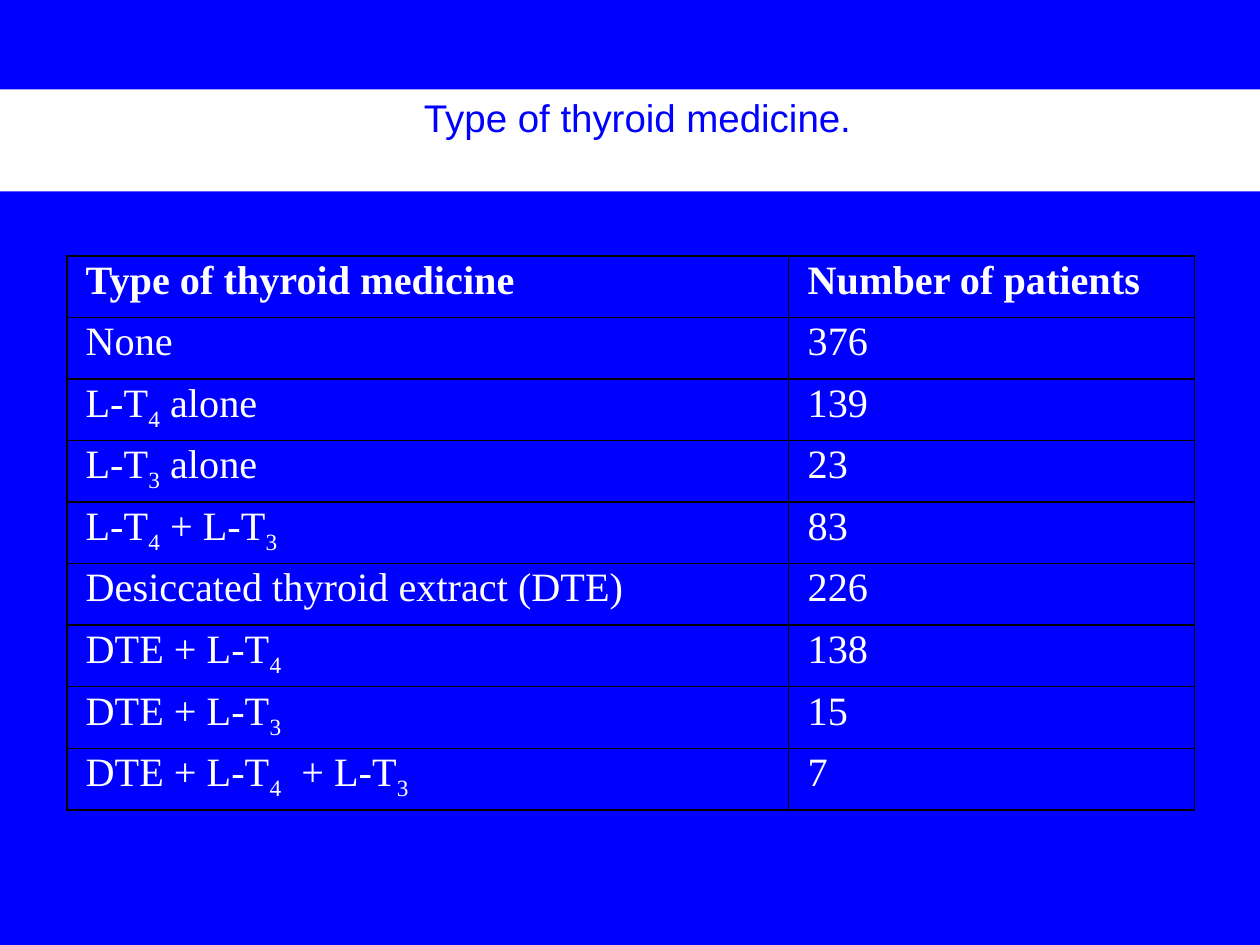
from dataclasses import dataclass

from lxml.etree import SubElement
from pptx import Presentation
from pptx.dml.color import RGBColor
from pptx.enum.shapes import MSO_SHAPE
from pptx.enum.text import MSO_ANCHOR, PP_ALIGN
from pptx.oxml.ns import qn
from pptx.util import Inches, Pt


@dataclass(frozen=True)
class Theme:
    blue: str = "0000FF"
    white: str = "FFFFFF"
    black: str = "000000"
    title_font: str = "Arial"
    table_font: str = "Times New Roman"
    title_size: int = 22
    table_size: int = 23
    border_width: int = 1


class SlideBuilder:
    """Draws themed elements on one slide, measured on a 100 by 75 grid."""

    def __init__(self, presentation, theme):
        self.theme = theme
        self.column = presentation.slide_width / 100
        self.row = presentation.slide_height / 75
        self.slide = presentation.slides.add_slide(presentation.slide_layouts[6])
        self.fill(self.slide.background, theme.blue)

    def place(self, left, top, width, height):
        return (round(left * self.column), round(top * self.row),
                round(width * self.column), round(height * self.row))

    def fill(self, target, color):
        target.fill.solid()
        target.fill.fore_color.rgb = RGBColor.from_string(color)

    def style(self, run, font, size, color, bold=False):
        run.font.name = font
        run.font.size = Pt(size)
        run.font.bold = bold
        run.font.color.rgb = RGBColor.from_string(color)

    def band(self, *box):
        shape = self.slide.shapes.add_shape(MSO_SHAPE.RECTANGLE, *self.place(*box))
        shape.shadow.inherit = False
        self.fill(shape, self.theme.white)
        shape.line.fill.background()

    def title(self, text, *box):
        text_frame = self.slide.shapes.add_textbox(*self.place(*box)).text_frame
        text_frame.word_wrap = True
        text_frame.vertical_anchor = MSO_ANCHOR.TOP
        text_frame.margin_top = Inches(0.09)
        text_frame.text = text
        paragraph = text_frame.paragraphs[0]
        paragraph.alignment = PP_ALIGN.CENTER
        paragraph.line_spacing = 0.9
        self.style(paragraph.runs[0], self.theme.title_font,
                   self.theme.title_size, self.theme.blue)

    def border(self, cell):
        properties = cell._tc.get_or_add_tcPr()
        for side in ("lnL", "lnR", "lnT", "lnB"):
            line = SubElement(properties, qn(f"a:{side}"), w=str(Pt(self.theme.border_width)))
            solid = SubElement(line, qn("a:solidFill"))
            SubElement(solid, qn("a:srgbClr"), val=self.theme.black)

    def cell(self, cell, text, bold):
        self.border(cell)
        cell.fill.background()
        cell.margin_left = cell.margin_right = Inches(0.15)
        cell.margin_top, cell.margin_bottom = Inches(0.02), 0
        paragraph = cell.text_frame.paragraphs[0]
        for index, part in enumerate(text.split("_")):
            if part:
                run = paragraph.add_run()
                run.text = part
                self.style(run, self.theme.table_font, self.theme.table_size,
                           self.theme.white, bold)
                if index % 2:
                    run._r.get_or_add_rPr().set("baseline", "-25000")

    def table(self, records, widths, left, top, height):
        box = self.place(left, top, sum(widths), height)
        table = self.slide.shapes.add_table(len(records), len(widths), *box).table
        table.first_row = table.horz_banding = False
        for column, width in zip(table.columns, widths):
            column.width = round(width * self.column)
        for index, record in enumerate(records):
            for cell, text in zip(table.rows[index].cells, record):
                self.cell(cell, text, bold=index == 0)


RECORDS = [
    ("Type of thyroid medicine", "Number of patients"),
    ("None", "376"),
    ("L-T_4_ alone", "139"),
    ("L-T_3_ alone", "23"),
    ("L-T_4_ + L-T_3_", "83"),
    ("Desiccated thyroid extract (DTE)", "226"),
    ("DTE + L-T_4_", "138"),
    ("DTE + L-T_3_", "15"),
    ("DTE + L-T_4_  + L-T_3_", "7"),
]


def main():
    presentation = Presentation()
    presentation.slide_width, presentation.slide_height = Inches(10), Inches(7.5)
    builder = SlideBuilder(presentation, Theme())
    builder.band(0, 7.1, 100, 8.1)
    builder.title("Type of thyroid medicine.", 4.6, 7, 92, 8.1)
    builder.table(RECORDS, widths=(57.3, 32.2), left=5.3, top=20.3, height=44)
    presentation.save("out.pptx")


if __name__ == "__main__":
    main()
